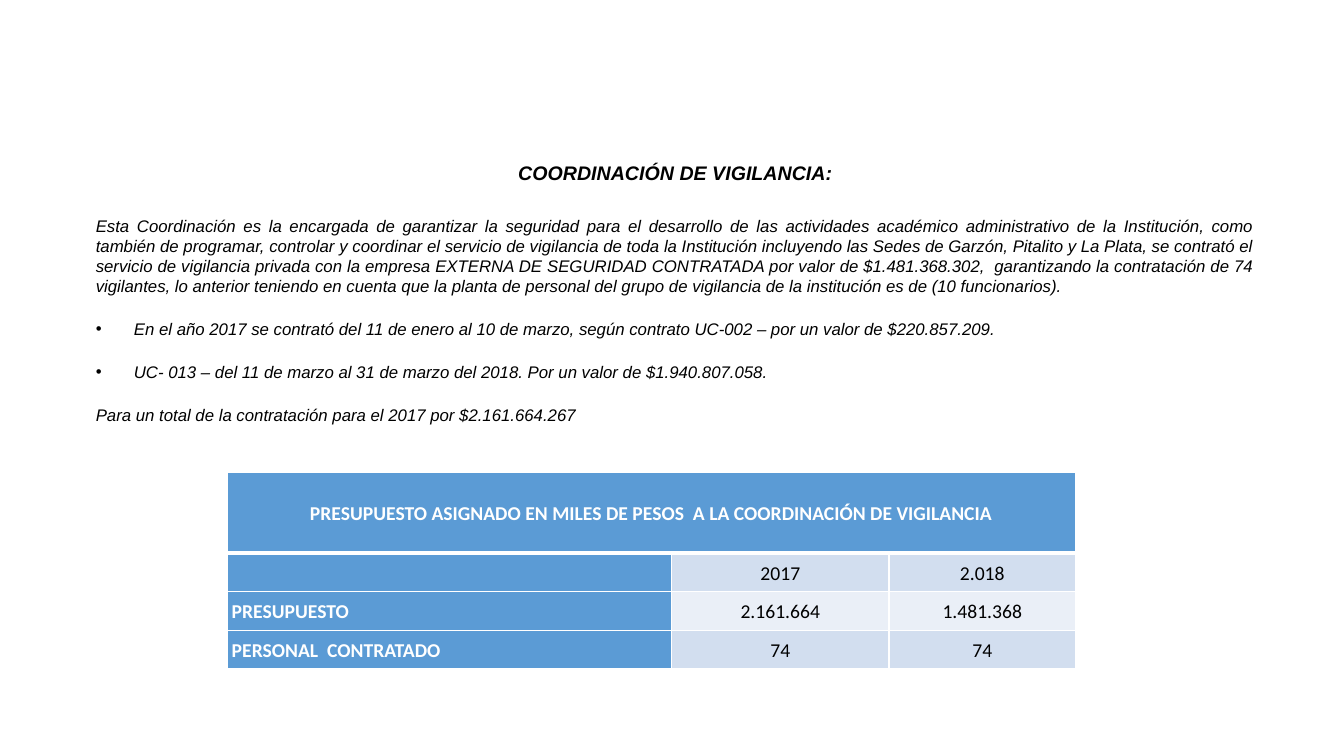
import pptx
import pptx.dml.color
import pptx.enum.text
import pptx.oxml
import pptx.oxml.ns
import pptx.util
from collections import namedtuple
from pptx.util import Cm

Box = namedtuple("Box", "left top width height")
ALIGN = pptx.enum.text.PP_ALIGN
ANCHOR = pptx.enum.text.MSO_ANCHOR
COLORS = {
    "text": "000000",
    "white": "FFFFFF",
    "header": "5B9BD5",
    "band_dark": "D2DEEF",
    "band_light": "EAEFF7",
}
HEADING = "COORDINACIÓN DE VIGILANCIA:"
INTRODUCTION = (
    "Esta Coordinación es la encargada de garantizar la seguridad para el desarrollo de las "
    "actividades académico administrativo de la Institución, como también de programar, controlar "
    "y coordinar el servicio de vigilancia de toda la Institución incluyendo las Sedes de Garzón, "
    "Pitalito y La Plata, se contrató el servicio de vigilancia privada con la empresa EXTERNA "
    "DE SEGURIDAD CONTRATADA por valor de $1.481.368.302,  garantizando la contratación de 74 "
    "vigilantes, lo anterior teniendo en cuenta que la planta de personal del grupo de vigilancia "
    "de la institución es de (10 funcionarios)."
)
CONTRACTS = [
    "En el año 2017 se contrató del 11 de enero al 10 de marzo, según contrato UC-002 – por un "
    "valor de $220.857.209.",
    "UC- 013 – del 11 de marzo al 31 de marzo del 2018. Por un valor de $1.940.807.058.",
]
TOTAL = "Para un total de la contratación para el 2017 por $2.161.664.267"
BUDGET_TITLE = "PRESUPUESTO ASIGNADO EN MILES DE PESOS  A LA COORDINACIÓN DE VIGILANCIA"
BUDGET_ROWS = [
    ["", "2017", "2.018"],
    ["PRESUPUESTO", "2.161.664", "1.481.368"],
    ["PERSONAL  CONTRATADO", "74", "74"],
]


def add_xml(parent, tag, **attributes):
    element = pptx.oxml.parse_xml(
        f'<{tag} xmlns:a="http://schemas.openxmlformats.org/drawingml/2006/main"/>'
    )
    for name, value in attributes.items():
        element.set(name, str(value))
    parent.append(element)
    return element


def write_text(paragraph, text, size=14, font="Arial", color="text", bold=False, italic=False,
               align=ALIGN.LEFT, line_spacing=1.07, space_before=0):
    paragraph.alignment = align
    paragraph.line_spacing = line_spacing
    paragraph.space_before = pptx.util.Pt(space_before)
    run = paragraph.add_run()
    run.text = text
    run.font.size = pptx.util.Pt(size)
    run.font.name = font
    run.font.bold = bold
    run.font.italic = italic
    run.font.color.rgb = pptx.dml.color.RGBColor.from_string(COLORS[color])


def set_bullet(paragraph, shown):
    properties = paragraph._p.get_or_add_pPr()
    indent = Cm(0.96) if shown else 0
    properties.set("marL", str(indent))
    properties.set("indent", str(-indent))
    if shown:
        add_xml(properties, "a:buFont", typeface="Arial")
        add_xml(properties, "a:buChar", char="•")
    else:
        add_xml(properties, "a:buNone")


def place_placeholder(shape, box):
    shape.left, shape.top, shape.width, shape.height = box
    shape.text_frame.word_wrap = True
    shape.text_frame.auto_size = pptx.enum.text.MSO_AUTO_SIZE.NONE
    shape.text_frame.vertical_anchor = ANCHOR.TOP


def fill_heading(shape, box):
    place_placeholder(shape, box)
    write_text(shape.text_frame.paragraphs[0], HEADING, bold=True, italic=True,
               align=ALIGN.CENTER)


def fill_body(shape, box):
    place_placeholder(shape, box)
    frame = shape.text_frame
    for index, text in enumerate([INTRODUCTION, *CONTRACTS, TOTAL]):
        paragraph = frame.add_paragraph() if index else frame.paragraphs[0]
        set_bullet(paragraph, text in CONTRACTS)
        write_text(paragraph, text, size=12, italic=True, align=ALIGN.JUSTIFY,
                   line_spacing=1.07 if index else 1.0, space_before=15.4 if index else 0)


def format_cell(cell, fill, top=1, bottom=1):
    properties = cell._tc.get_or_add_tcPr()
    for side, width in {"L": 1, "R": 1, "T": top, "B": bottom}.items():
        line = add_xml(properties, f"a:ln{side}", w=pptx.util.Pt(width))
        add_xml(add_xml(line, "a:solidFill"), "a:srgbClr", val=COLORS["white"])
    cell.fill.solid()
    cell.fill.fore_color.rgb = pptx.dml.color.RGBColor.from_string(COLORS[fill])
    cell.vertical_anchor = ANCHOR.MIDDLE
    cell.margin_left = cell.margin_right = Cm(0.12)
    cell.margin_top = cell.margin_bottom = 0


def add_budget_table(slide, box):
    table = slide.shapes.add_table(len(BUDGET_ROWS) + 1, 3, *box).table
    table.first_row = table.horz_banding = False
    for column, share in zip(table.columns, (0.524, 0.256, 0.22)):
        column.width = int(box.width * share)
    for row, share in zip(table.rows, (0.41, 0.197, 0.197, 0.196)):
        row.height = int(box.height * share)

    for cell in table.rows[0].cells:
        format_cell(cell, "header", bottom=3)
    title_cell = table.cell(0, 0)
    title_cell.merge(table.cell(0, 2))
    write_text(title_cell.text_frame.paragraphs[0], BUDGET_TITLE, font="Calibri",
               color="white", bold=True, align=ALIGN.CENTER)

    for row, values in enumerate(BUDGET_ROWS, 1):
        band = "band_dark" if row % 2 else "band_light"
        for column, value in enumerate(values):
            cell = table.cell(row, column)
            label = column == 0
            format_cell(cell, "header" if label else band, top=3 if row == 1 else 1)
            if value:
                write_text(cell.text_frame.paragraphs[0], value, font="Calibri",
                           color="white" if label else "text", bold=label,
                           align=ALIGN.LEFT if label else ALIGN.CENTER)


def build_surveillance_slide(presentation, box):
    slide = presentation.slides.add_slide(presentation.slide_layouts[1])
    text_left, text_width = box.left + Cm(2.16), Cm(29.72)
    fill_heading(slide.shapes.title, Box(text_left, box.top + Cm(3.89), text_width, Cm(1)))
    fill_body(slide.placeholders[1], Box(text_left, box.top + Cm(5.3), text_width, Cm(6)))
    add_budget_table(slide, Box(box.left + Cm(5.72), box.top + Cm(11.91), Cm(21.39), Cm(4.95)))


def main():
    presentation = pptx.Presentation()
    presentation.slide_width = Cm(33.87)
    presentation.slide_height = Cm(19.05)
    build_surveillance_slide(
        presentation, Box(0, 0, presentation.slide_width, presentation.slide_height)
    )
    presentation.save("out.pptx")


if __name__ == "__main__":
    main()
